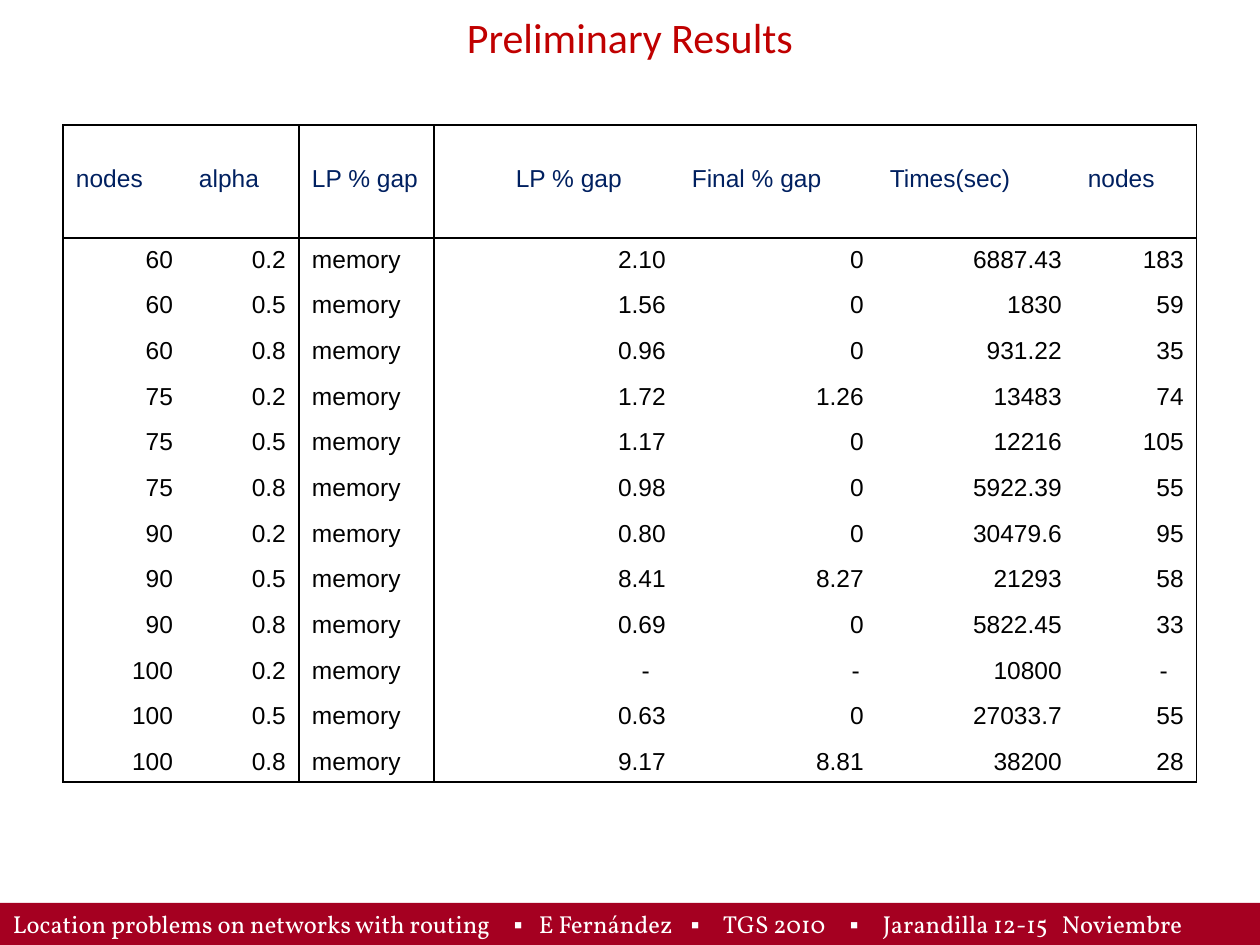
from lxml import etree
from pptx import Presentation
from pptx.dml.color import RGBColor
from pptx.enum.shapes import MSO_SHAPE
from pptx.enum.text import MSO_ANCHOR, PP_ALIGN
from pptx.oxml.ns import qn
from pptx.util import Emu, Pt

LEFT, CENTER, RIGHT = PP_ALIGN.LEFT, PP_ALIGN.CENTER, PP_ALIGN.RIGHT
TOP, MIDDLE, BOTTOM = MSO_ANCHOR.TOP, MSO_ANCHOR.MIDDLE, MSO_ANCHOR.BOTTOM
RECT = MSO_SHAPE.RECTANGLE

COLORS = {"bar": "A50021", "title": "C00000", "head": "002060",
          "body": "000000", "line": "000000", "white": "FFFFFF"}

TITLE = "Preliminary Results"
HEAD = ["nodes", "alpha", "LP % gap", "", "LP % gap", "Final % gap",
        "Times(sec)", "nodes"]
# nodes, alpha, LP % gap, final % gap, seconds, tree nodes
RESULTS = [
    ("60", "0.2", "2.10", "0", "6887.43", "183"),
    ("60", "0.5", "1.56", "0", "1830", "59"),
    ("60", "0.8", "0.96", "0", "931.22", "35"),
    ("75", "0.2", "1.72", "1.26", "13483", "74"),
    ("75", "0.5", "1.17", "0", "12216", "105"),
    ("75", "0.8", "0.98", "0", "5922.39", "55"),
    ("90", "0.2", "0.80", "0", "30479.6", "95"),
    ("90", "0.5", "8.41", "8.27", "21293", "58"),
    ("90", "0.8", "0.69", "0", "5822.45", "33"),
    ("100", "0.2", "-", "-", "10800", "-"),
    ("100", "0.5", "0.63", "0", "27033.7", "55"),
    ("100", "0.8", "9.17", "8.81", "38200", "28"),
]
# text and its left edge in px
FOOTER = [("Location problems on networks with routing", 13), ("▪", 514),
          ("E Fernández", 539), ("▪", 691), ("TGS 2010", 723), ("▪", 850),
          ("Jarandilla 12-15", 883), ("Noviembre", 1062)]

WIDTHS = [123, 113, 135, 69, 176, 198, 198, 122]
HEAD_ROWS = [74, 39]
FIRST_ROW, OTHER_ROWS = 41, 503
PAD_X, PAD_Y = 13, 6
DASH_PAD = {4: 29, 5: 17, 7: 29}
RULED_LEFT, RULED_RIGHT = {0, 2, 3}, {1, 2, 7}


def px(n):
    return Emu(round(n * 914400 / 126))


def apply(thing, values):
    for name, value in values.items():
        setattr(thing, name, value)


def style(font, size, name, color):
    apply(font, {"size": Pt(size), "name": name})
    font.color.rgb = RGBColor.from_string(COLORS[color])


def add_run(para, text, *look):
    run = para.add_run()
    run.text = text
    style(run.font, *look)


def rule(cell, sides):
    """Draw the named cell edges and clear the others."""
    props = cell._tc.get_or_add_tcPr()
    for side in "LRTB":
        line = etree.SubElement(props, qn("a:ln" + side), w=str(Pt(1)))
        if side in sides:
            fill = etree.SubElement(line, qn("a:solidFill"))
            etree.SubElement(fill, qn("a:srgbClr"), val=COLORS["line"])
        else:
            etree.SubElement(line, qn("a:noFill"))


def add_footer(slide):
    bar = slide.shapes.add_shape(RECT, 0, px(903), px(1260), px(42))
    bar.shadow.inherit = False
    bar.fill.solid()
    bar.fill.fore_color.rgb = RGBColor.from_string(COLORS["bar"])
    bar.line.fill.background()
    apply(bar.text_frame, {"word_wrap": True, "vertical_anchor": TOP,
                           "margin_left": px(PAD_X), "margin_right": 0,
                           "margin_top": px(PAD_Y), "margin_bottom": 0})
    para = bar.text_frame.paragraphs[0]
    para.alignment = LEFT
    tabs = etree.SubElement(para._p.get_or_add_pPr(), qn("a:tabLst"))
    for i, (text, left) in enumerate(FOOTER):
        if i:
            etree.SubElement(tabs, qn("a:tab"), pos=str(px(left - PAD_X)),
                             algn="l")
        face = "Calibri" if text == "▪" else "Vollkorn"
        add_run(para, "\t" * bool(i) + text, 14, face, "white")


def add_title(slide):
    box = slide.shapes.add_textbox(px(63), 0, px(1134), px(73))
    apply(box.text_frame, {"word_wrap": True, "vertical_anchor": MIDDLE})
    para = box.text_frame.paragraphs[0]
    para.alignment = CENTER
    add_run(para, TITLE, 24, "Calibri", "title")


def add_results(slide):
    body = [[*r[:2], "memory", "", *r[2:]] for r in RESULTS]
    rows = [HEAD, [""] * len(HEAD)] + body
    later = len(body) - 1
    heights = HEAD_ROWS + [FIRST_ROW] + [OTHER_ROWS / later] * later
    table = slide.shapes.add_table(
        len(rows), len(HEAD), px(63), px(125), px(sum(WIDTHS)),
        px(sum(heights))).table
    apply(table, {"first_row": False, "horz_banding": False})
    for col, width in zip(table.columns, WIDTHS):
        col.width = px(width)
    for row, height in zip(table.rows, heights):
        row.height = px(height)

    for r, row in enumerate(rows):
        edges = "T" * (r in (0, 2)) + "B" * (r in (1, len(rows) - 1))
        for c, text in enumerate(row):
            cell = table.cell(r, c)
            rule(cell, edges + "L" * (c in RULED_LEFT)
                 + "R" * (c in RULED_RIGHT))
            cell.fill.background()
            pad = px(PAD_Y) if text else 0
            right = DASH_PAD[c] if text == "-" else PAD_X
            apply(cell, {"vertical_anchor": BOTTOM, "margin_top": pad,
                         "margin_bottom": pad, "margin_left": px(PAD_X),
                         "margin_right": px(right)})
            if text:
                para = cell.text_frame.paragraphs[0]
                para.alignment = LEFT if r == 0 or c == 2 else RIGHT
                add_run(para, text, 14, "Arial", "body" if r else "head")


def main():
    deck = Presentation()
    apply(deck, {"slide_width": px(1260), "slide_height": px(945)})
    slide = deck.slides.add_slide(deck.slide_layouts[6])
    add_footer(slide)
    add_title(slide)
    add_results(slide)
    deck.save("out.pptx")


if __name__ == "__main__":
    main()
